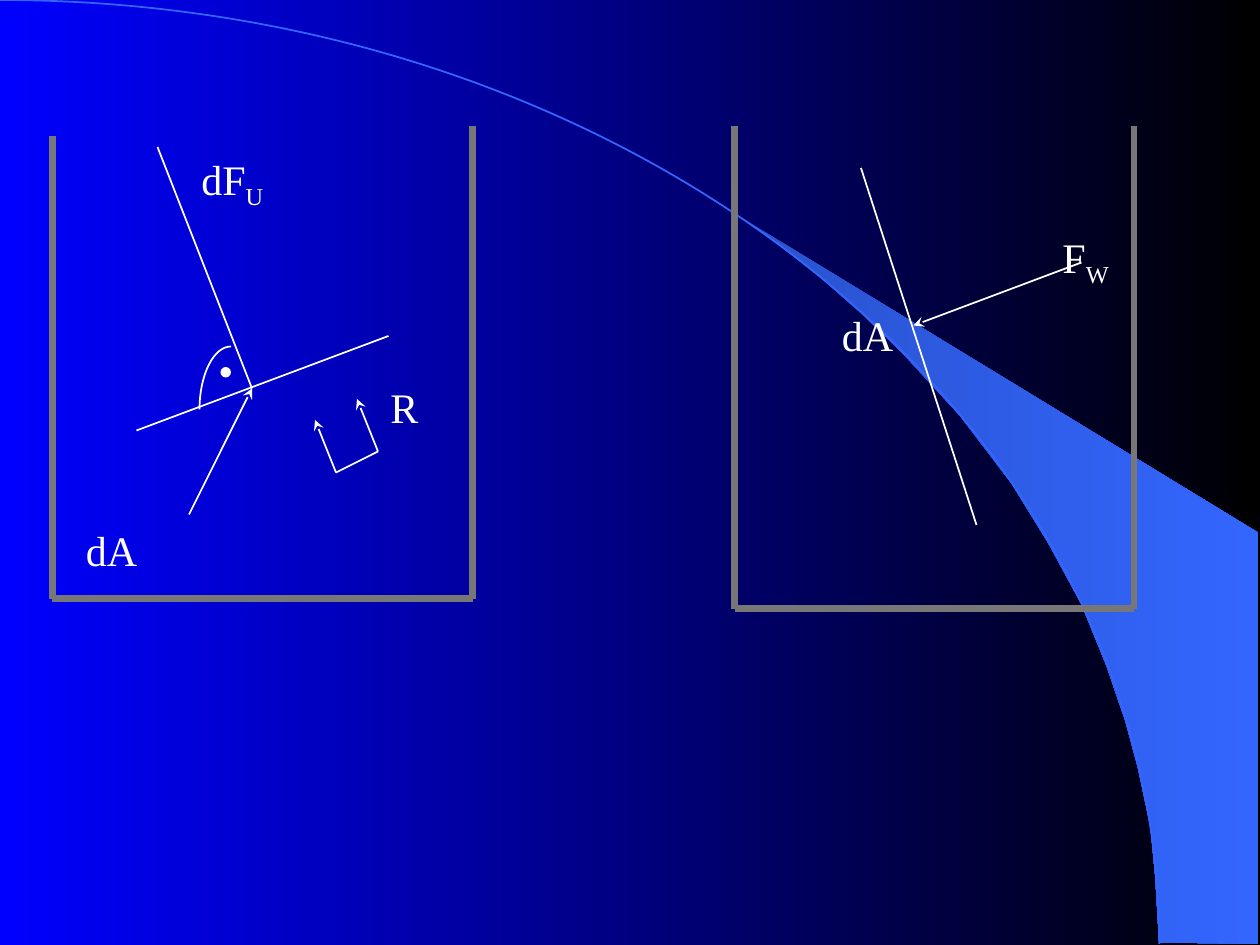
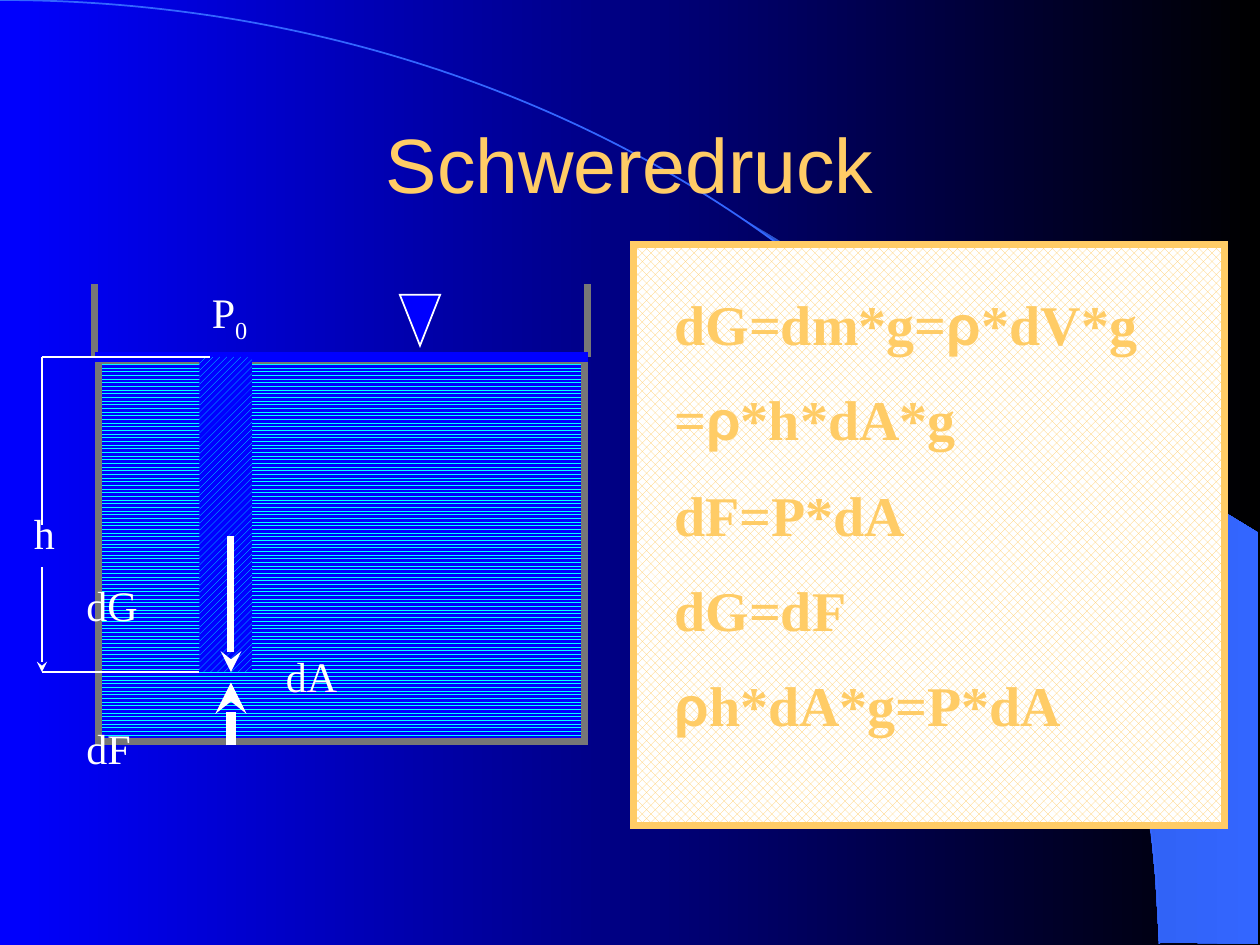
"""Builds two slides on pressure in liquids: force sketches and gravity pressure."""
import itertools

import pptx
import pptx.dml.color
import pptx.enum.dml
import pptx.enum.shapes
import pptx.enum.text
import pptx.oxml
import pptx.oxml.ns
import pptx.util

Pt = pptx.util.Pt
Form = pptx.enum.shapes.MSO_SHAPE
Hatch = pptx.enum.dml.MSO_PATTERN
SPACE = pptx.oxml.ns.nsdecls("a")
SERIF, SANS = "Times New Roman", "Arial"
HEX = {"blue": "0000FF", "black": "000000", "deep": "2952CC", "sky": "3366FF",
       "grey": "777777", "white": "FFFFFF", "gold": "FFCC66", "aqua": "00FFFF"}
RGB = {name: pptx.dml.color.RGBColor.from_string(code) for name, code in HEX.items()}


def write(slide, text, box, size=24, ink="white", face=SERIF, bold=False, top=3.6, mid=False):
    """Write (indent, space before, text) lines; "_" starts a subscript."""
    frame = slide.shapes.add_textbox(*map(Pt, box)).text_frame
    frame.word_wrap = True
    frame.margin_top = Pt(top)
    if mid:
        frame.vertical_anchor = pptx.enum.text.MSO_ANCHOR.MIDDLE
    for row, (indent, gap, line) in enumerate(text):
        para = frame.add_paragraph() if row else frame.paragraphs[0]
        para.space_before = Pt(gap)
        if mid:
            para.alignment = pptx.enum.text.PP_ALIGN.CENTER
        if indent:
            para._p.get_or_add_pPr().set("marL", str(Pt(indent)))
        for sub, part in enumerate(line.split("_")):
            for rho, chars in itertools.groupby(part, lambda sign: sign == "ρ"):
                run = para.add_run()
                run.text = "".join(chars)
                run.font.size = Pt(size)
                run.font.name = SANS if rho else face
                run.font.bold = bold
                run.font.color.rgb = RGB[ink]
                if sub:
                    run._r.get_or_add_rPr().set("baseline", "-25000")


def stroke(slide, ends, ink="white", width=1, tip=False):
    """Draw a straight line, with an arrowhead at its end if tip is set."""
    line = slide.shapes.add_connector(pptx.enum.shapes.MSO_CONNECTOR.STRAIGHT, *map(Pt, ends))
    line.line.color.rgb = RGB[ink]
    line.line.width = Pt(width)
    if tip:
        line.line._get_or_add_ln().append(pptx.oxml.parse_xml(f'<a:tailEnd {SPACE} type="stealth"/>'))
    line._element.spPr.append(pptx.oxml.parse_xml(f"<a:effectLst {SPACE}/>"))


deck = pptx.Presentation()
deck.slide_width, deck.slide_height = Pt(720), Pt(540)
slides = [deck.slides.add_slide(deck.slide_layouts[6]) for _ in range(2)]
force, weight = slides

blade = [(662.4, 538.6), (719.3, 539.3), (719.3, 304.6), (424.1, 124.6), (449.3, 143.3),
         (470.2, 159.8), (493.2, 180), (515.5, 201.6), (548.6, 237.6), (578.2, 276.5),
         (599, 310.3), (617.8, 344.9), (632.2, 380.2), (643, 411.8), (650.2, 438.5),
         (657.4, 472.3), (660.2, 501.1)]
sweep = [(0, 0), (365.8, 0), (662.4, 241.2), (662.4, 539.3)]
bend = [(114, 234), (114, 214.1), (122.1, 198), (132, 198)]

curves = [(slide, dots, ink) for slide in slides
          for dots, ink in ((blade, None), (sweep, "sky"))]
fades = [(deck.slide_master.background.fill, "blue", "black")]
for slide, dots, ink in curves + [(force, bend, "white")]:
    dots = [(Pt(x), Pt(y)) for x, y in dots]
    pen = slide.shapes.build_freeform(*dots[0], scale=1.0)
    pen.add_line_segments(dots[1:], close=ink is None)
    curve = pen.convert_to_shape()
    curve.shadow.inherit = False
    if ink:
        curve.fill.background()
        curve.line.color.rgb = RGB[ink]
        curve.line.width = Pt(1)
        arc = pptx.oxml.parse_xml(f"<a:cubicBezTo {SPACE}/>")
        legs = curve._element.findall(".//" + pptx.oxml.ns.qn("a:lnTo"))
        legs[0].addprevious(arc)
        for leg in legs:
            arc.append(leg[0])
            leg.getparent().remove(leg)
    else:
        curve.line.fill.background()
        fades.append((curve.fill, "deep", "sky"))
for fill, *inks in fades:
    fill.gradient()
    fill.gradient_angle = 0
    for stop, ink in zip(fill.gradient_stops, inks):
        stop.color.rgb = RGB[ink]

for left, right, rims, base in ((30, 270, (78, 72), 342), (420, 648, (72, 72), 348)):
    for ends in ((left, rims[0], left, base), (left, base, right, base),
                 (right, base, right, rims[1])):
        stroke(force, ends, "grey", 4)
for *ends, tip in ((78, 246, 222, 192, False), (144, 222, 90, 84, False),
                   (108, 294, 144, 222, True), (192, 270, 180, 240, True),
                   (192, 270, 216, 258, False), (216, 258, 204, 228, True),
                   (492, 96, 558, 300, False), (618, 150, 522, 186, True)):
    stroke(force, ends, tip=tip)
write(force, [(66, 0, "dF_U"), (558, 12, "F_W"), (432, 12, "dA"),
              (174, 12, "R"), (0, 53, "dA")], (42, 84, 677.5, 251.5))

write(weight, [(0, 0, "Schweredruck")], (54, 48, 612, 90),
      size=44, ink="gold", face=SANS, mid=True)

shapes = [
    (force, Form.OVAL, (126.5, 210.25, 5, 5), None, "white", "white", "white", 1),
    (weight, Form.RECTANGLE, (56.25, 206, 278, 218), Hatch.ZIG_ZAG, "aqua", "blue", "grey", 4),
    (weight, Form.ISOSCELES_TRIANGLE, (228.5, 168.5, 23, 29), None, "blue", "blue", "white", 1),
    (weight, Form.RECTANGLE, (114, 204, 30, 180), Hatch.WIDE_UPWARD_DIAGONAL,
     "aqua", "blue", None, 0),
    (weight, Form.RECTANGLE, (362.25, 139.75, 337.5, 332), Hatch.PERCENT_50,
     "gold", "white", "gold", 4),
]
for x in (54, 336):
    stroke(weight, (x, 204, x, 162), "grey", 4)
for slide, form, box, hatch, front, rear, edge, width in shapes:
    shape = slide.shapes.add_shape(form, *map(Pt, box))
    shape.shadow.inherit = False
    if hatch:
        shape.fill.patterned()
        shape.fill.pattern = hatch
        shape.fill.fore_color.rgb = RGB[front]
        shape.fill.back_color.rgb = RGB[rear]
    else:
        shape.fill.solid()
        shape.fill.fore_color.rgb = RGB[front]
    if edge:
        shape.line.color.rgb = RGB[edge]
        shape.line.width = Pt(width)
        shape.line._get_or_add_ln().append(pptx.oxml.parse_xml(f'<a:miter {SPACE} lim="800000"/>'))
    else:
        shape.line.fill.background()
    if form == Form.ISOSCELES_TRIANGLE:
        shape.rotation = 180
        stroke(weight, (54, 204, 336, 204), "blue", 6)

write(weight, [(101.75, 0, "P_0"), (0, 93.5, "h"), (30, 12, "dG"),
               (144, 12, "dA"), (30, 12, "dF")], (12.25, 120, 396, 337.5), top=44)
for *ends, width, tip in ((24, 204, 24, 300, 1, False), (24, 324, 24, 384, 1, True),
                          (24, 204, 120, 204, 1, False), (24, 384, 114, 384, 1, False),
                          (132, 306, 132, 384, 4, True), (132, 426, 132, 390, 6, True)):
    stroke(weight, ends, width=width, tip=tip)
terms = ["dG=dm*g=ρ*dV*g", "=ρ*h*dA*g", "dF=P*dA", "dG=dF", "ρh*dA*g=P*dA"]
write(weight, [(0, 16 if row else 0, term) for row, term in enumerate(terms)],
      (378.25, 162, 306, 276.5), size=32, ink="gold", bold=True)

deck.save("out.pptx")
